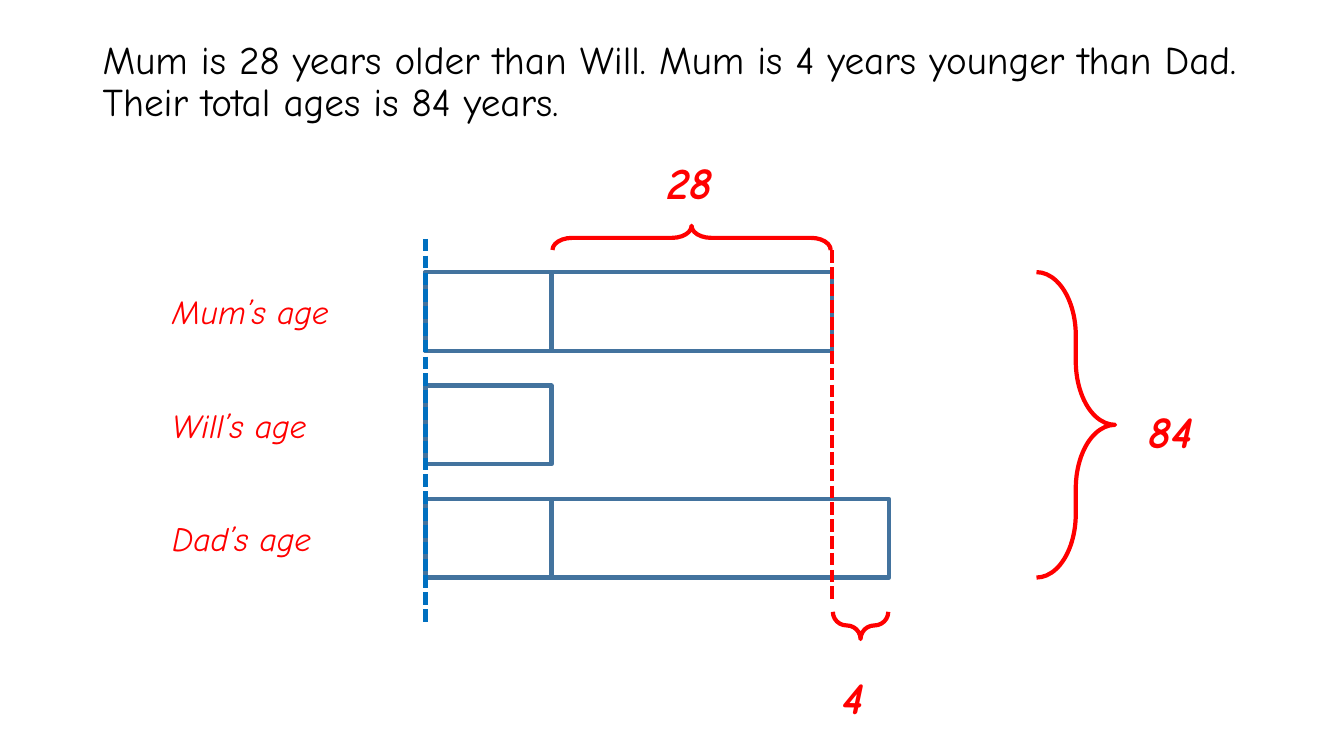
from lxml import etree
from pptx import Presentation
from pptx.dml.color import RGBColor
from pptx.enum.dml import MSO_LINE
from pptx.enum.shapes import MSO_CONNECTOR, MSO_SHAPE
from pptx.oxml.ns import qn
from pptx.util import Inches, Pt

RECT = MSO_SHAPE.RECTANGLE
BRACE = MSO_SHAPE.RIGHT_BRACE
STRAIGHT = MSO_CONNECTOR.STRAIGHT
DASH = MSO_LINE.SQUARE_DOT

FONT = "Comic Neue"
BLACK, RED, BAR_BLUE, GUIDE_BLUE = "000000", "FF0000", "43739E", "0070C0"

BAR_LEFT, BAR_TOP, BAR_HEIGHT, ROW_STEP = 4.22, 2.7, 0.78, 1.125
WILL_WIDTH, MUM_WIDTH, DAD_WIDTH = 1.25, 4.03, 4.6
MUM_RIGHT = BAR_LEFT + MUM_WIDTH

# Label and the widths of the overlapping bars in each row
ROWS = [
    ("Mum’s age", [MUM_WIDTH, WILL_WIDTH]),
    ("Will’s age", [WILL_WIDTH]),
    ("Dad’s age", [DAD_WIDTH, WILL_WIDTH]),
]


def color(value):
    return RGBColor.from_string(value)


def style_line(line, line_color):
    line.color.rgb = color(line_color)
    line.width = Pt(3)


def add_text(s, text, left, top, width, height, size, text_color=RED,
             bold=False, italic=True):
    box = s.shapes.add_textbox(Inches(left), Inches(top), Inches(width), Inches(height))
    tf = box.text_frame
    tf.word_wrap = True
    tf.text = text
    p = tf.paragraphs[0]
    font = p.runs[0].font
    font.name, font.size = FONT, Pt(size)
    font.bold, font.italic = bold, italic
    font.color.rgb = color(text_color)
    return p


def add_outline(s, kind, left, top, width, height, line_color):
    sp = s.shapes.add_shape(kind, Inches(left), Inches(top), Inches(width), Inches(height))
    sp.shadow.inherit = False
    sp.fill.background()
    style_line(sp.line, line_color)
    return sp


def add_brace(s, left, top, width, height, rotation=0):
    sp = add_outline(s, BRACE, left, top, width, height, RED)
    sp.adjustments[0] = 0.81
    sp.rotation = rotation


def add_guide(s, x, top, bottom, line_color):
    guide = s.shapes.add_connector(STRAIGHT, Inches(x), Inches(top), Inches(x), Inches(bottom))
    style_line(guide.line, line_color)
    guide.line.dash_style = DASH
    etree.SubElement(guide._element.spPr, qn("a:effectLst"))


def main():
    prs = Presentation()
    prs.slide_width, prs.slide_height = Inches(13.33), Inches(7.5)
    s = prs.slides.add_slide(prs.slide_layouts[6])

    # Problem statement
    p = add_text(s, "Mum is 28 years older than Will. Mum is 4 years younger than Dad. "
                 "Their total ages is 84 years.",
                 0.92, 0.35, 11.5, 1.14, 28, BLACK, italic=False)
    p.line_spacing = 0.9

    # Bars and their labels
    for i, (label, widths) in enumerate(ROWS):
        top = BAR_TOP + i * ROW_STEP
        add_text(s, label, 1.61, top + 0.14, 1.91, 0.5, 24)
        for width in widths:
            add_outline(s, RECT, BAR_LEFT, top, width, BAR_HEIGHT, BAR_BLUE)

    # Braces: total, Mum minus Will, Dad minus Mum
    add_brace(s, 10.28, BAR_TOP, 0.78, 2 * ROW_STEP + BAR_HEIGHT)
    add_brace(s, 6.74, 0.98, 0.24, 2.76, rotation=270)
    add_brace(s, 8.4, 5.93, 0.27, 0.55, rotation=90)

    # Values beside the braces
    for value, left, top, width in [("4", 8.26, 6.59, 0.53),
                                    ("28", 6.52, 1.49, 0.76),
                                    ("84", 11.29, 3.96, 0.8)]:
        add_text(s, value, left, top, width, 0.64, 32, bold=True)

    # Dashed guides
    add_guide(s, MUM_RIGHT, 2.48, 5.94, RED)
    add_guide(s, BAR_LEFT, 2.37, 6.18, GUIDE_BLUE)

    prs.save("out.pptx")


if __name__ == "__main__":
    main()
